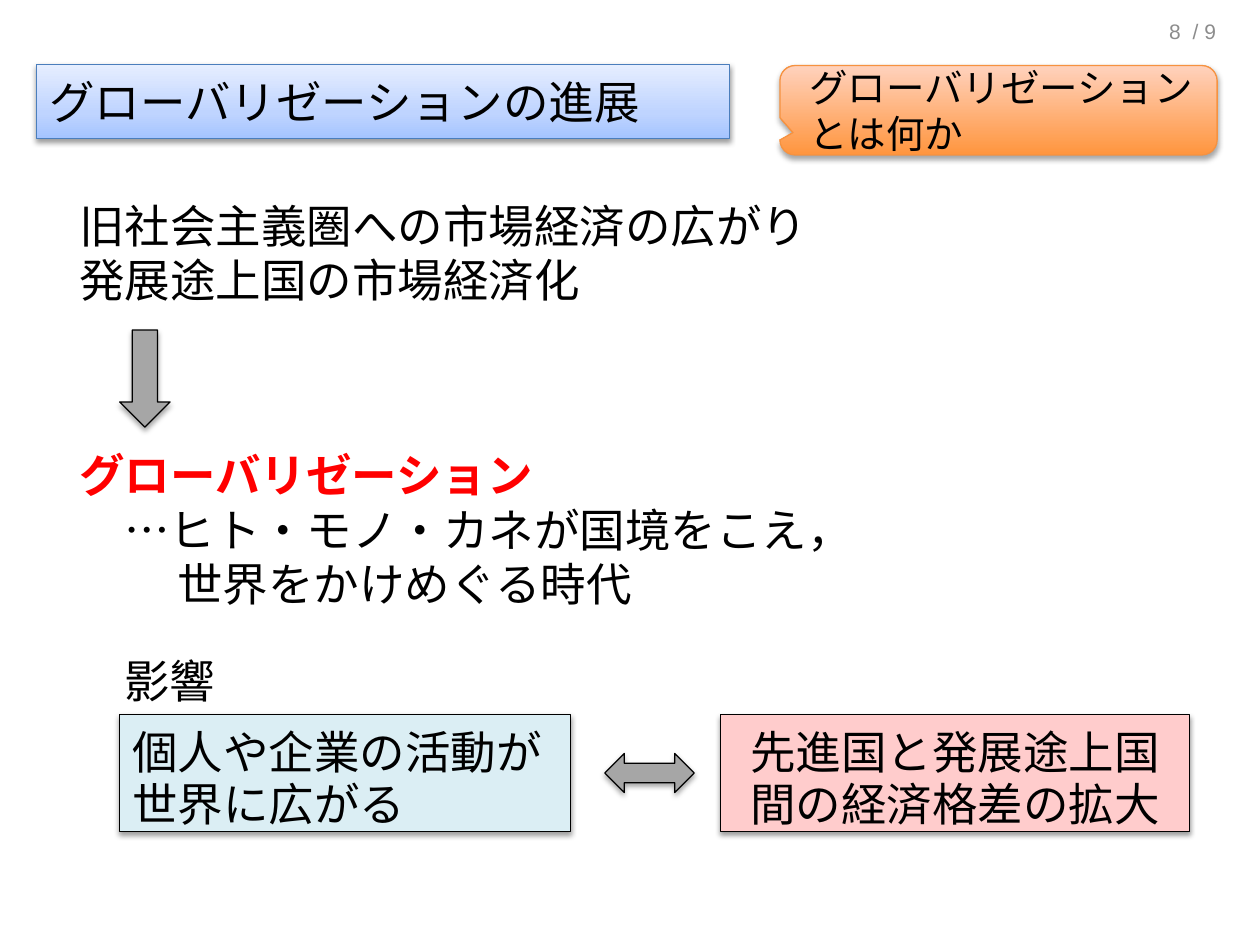
from lxml.etree import SubElement
from pptx import Presentation
from pptx.dml.color import RGBColor
from pptx.enum.shapes import MSO_SHAPE
from pptx.enum.text import MSO_ANCHOR, MSO_AUTO_SIZE, PP_ALIGN
from pptx.oxml.ns import qn
from pptx.util import Inches, Pt


def color(value):
    return RGBColor.from_string(value)


class SlideBuilder:
    font = "Noto Sans CJK JP"
    text_color = "000000"
    body_size = 26
    leading = 1.2

    def __init__(self, page):
        self.page = page

    def place(self, shape, left, top, width, height):
        shape.left, shape.top = Inches(left), Inches(top)
        shape.width, shape.height = Inches(width), Inches(height)

    def decorate(self, shape, fill, line, line_width, opacity=38, distance=1.6):
        """Fill is one colour, or a list of (position, colour) from the bottom up."""
        if isinstance(fill, str):
            shape.fill.solid()
            shape.fill.fore_color.rgb = color(fill)
        else:
            self.gradient(shape, fill)
        shape.line.color.rgb = color(line)
        shape.line.width = Pt(line_width)
        self.shadow(shape, opacity, distance)

    def gradient(self, shape, stops):
        shape.fill.gradient()
        shape.fill.gradient_angle = 90
        stop_list = shape._element.spPr.find(".//" + qn("a:gsLst"))
        stop_list.clear()
        for position, value in stops:
            stop = SubElement(stop_list, qn("a:gs"), pos=str(position * 1000))
            SubElement(stop, qn("a:srgbClr"), val=value)

    def shadow(self, shape, opacity, distance):
        shape.shadow.inherit = False
        effects = shape._element.spPr.find(qn("a:effectLst"))
        outer = SubElement(effects, qn("a:outerShdw"), blurRad=str(Pt(3.1)),
                           dist=str(Pt(distance)), dir="5400000", rotWithShape="0")
        black = SubElement(outer, qn("a:srgbClr"), val="000000")
        SubElement(black, qn("a:alpha"), val=str(opacity * 1000))

    def set_text(self, shape, text, size=body_size, align=PP_ALIGN.LEFT,
                 anchor=MSO_ANCHOR.TOP, font=font, value=text_color, leading=None):
        frame = shape.text_frame
        frame.text = text
        frame.word_wrap = True
        frame.auto_size = MSO_AUTO_SIZE.NONE
        frame.vertical_anchor = anchor
        for para in frame.paragraphs:
            para.alignment = align
            para.space_before = Pt(0)
            para.line_spacing = Pt(leading or size * self.leading)
            for span in para.runs:
                span.font.name = font
                span.font.size = Pt(size)
                span.font.color.rgb = color(value)
                SubElement(span._r.rPr, qn("a:ea"), typeface=font)
        return frame

    def title(self, text, *bounds):
        shape = self.page.shapes.title
        self.place(shape, *bounds)
        self.decorate(shape, [(0, "A4C4FF"), (35, "BFD4FF"), (100, "E6EEFF")],
                      "4B7EBC", 0.75)
        self.set_text(shape, text, anchor=MSO_ANCHOR.MIDDLE)

    def shape(self, kind, *bounds):
        return self.page.shapes.add_shape(kind, *map(Inches, bounds))

    def callout(self, text, *bounds):
        shape = self.shape(MSO_SHAPE.ROUNDED_RECTANGULAR_CALLOUT, *bounds)
        for index, value in enumerate((-0.47, 0.25, 0.17)):
            shape.adjustments[index] = value
        self.decorate(shape, [(0, "FF953E"), (100, "FFD2BD")], "F69240", 0.75, 35, 1.8)
        frame = self.set_text(shape, text, size=22, anchor=MSO_ANCHOR.MIDDLE)
        frame.margin_left = Inches(0.2)

    def arrow(self, kind, *bounds):
        self.decorate(self.shape(kind, *bounds), "A6A6A6", "000000", 0.75, 35, 1.8)

    def panel(self, text, fill, align, *bounds):
        shape = self.shape(MSO_SHAPE.RECTANGLE, *bounds)
        self.decorate(shape, fill, "000000", 0.5)
        frame = self.set_text(shape, text, align=align, leading=30)
        frame.margin_top = Inches(0.09)

    def text(self, text, *bounds, **style):
        box = self.page.shapes.add_textbox(*map(Inches, bounds))
        return self.set_text(box, text, **style)


def main():
    deck = Presentation()
    deck.slide_width, deck.slide_height = Inches(10), Inches(7.5)
    builder = SlideBuilder(deck.slides.add_slide(deck.slide_layouts[5]))

    # Page number
    for text, left in (("8", 7.14), ("/ 9", 7.42)):
        builder.text(text, left, 0.12, 2.33, 0.26, size=12, font="Arial",
                     value="8C8C8C", align=PP_ALIGN.RIGHT, anchor=MSO_ANCHOR.MIDDLE)

    # Heading and topic callout
    builder.title("グローバリゼーションの進展", 0.29, 0.51, 5.5, 0.59)
    builder.callout("グローバリゼーション\nとは何か", 6.19, 0.52, 3.47, 0.71)

    # Main explanation: text, indent in inches, space before in points
    lines = [
        ("旧社会主義圏への市場経済の広がり", 0, 0),
        ("発展途上国の市場経済化", 0, 0),
        ("グローバリゼーション", 0, 80),
        ("…ヒト・モノ・カネが国境をこえ，", 0.36, 0),
        ("世界をかけめぐる時代", 0.78, 0),
        ("影響", 0.36, 24),
    ]
    frame = builder.text("\n".join(line[0] for line in lines), 0.53, 1.52, 9.13, 5.08)
    for para, (_, indent, gap) in zip(frame.paragraphs, lines):
        para._p.get_or_add_pPr().set("marL", str(Inches(indent)))
        para.space_before = Pt(gap)
    keyword = frame.paragraphs[2].runs[0].font
    keyword.bold = True
    keyword.color.rgb = color("FF0000")

    # Arrows
    builder.arrow(MSO_SHAPE.DOWN_ARROW, 0.95, 2.62, 0.4, 0.77)
    builder.arrow(MSO_SHAPE.LEFT_RIGHT_ARROW, 4.8, 5.98, 0.71, 0.31)

    # Contrasting effects
    builder.panel("個人や企業の活動が世界に広がる", "DBEEF4", PP_ALIGN.LEFT,
                  0.95, 5.67, 3.58, 0.93)
    builder.panel("先進国と発展途上国間の経済格差の拡大", "FFCCCC", PP_ALIGN.CENTER,
                  5.72, 5.67, 3.72, 0.93)

    deck.save("out.pptx")


if __name__ == "__main__":
    main()
